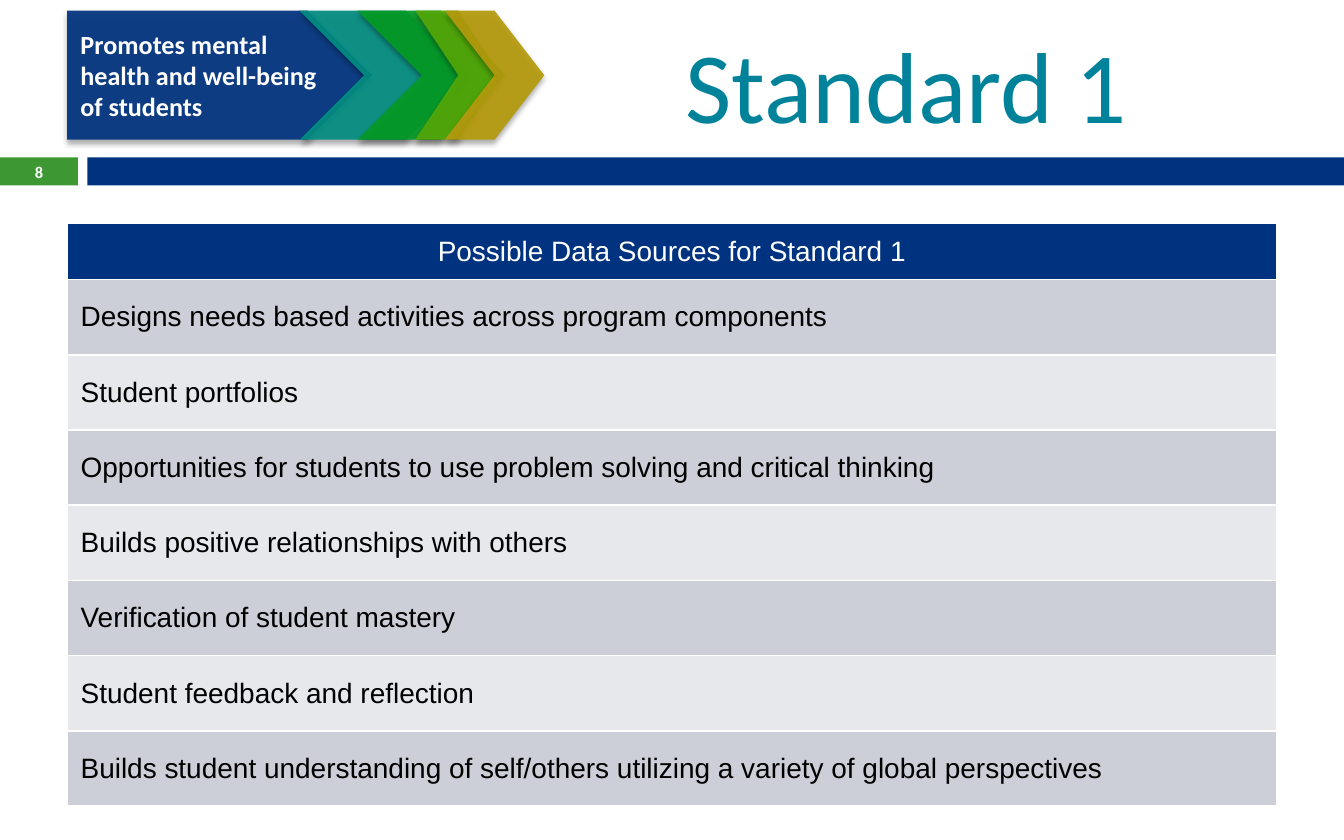
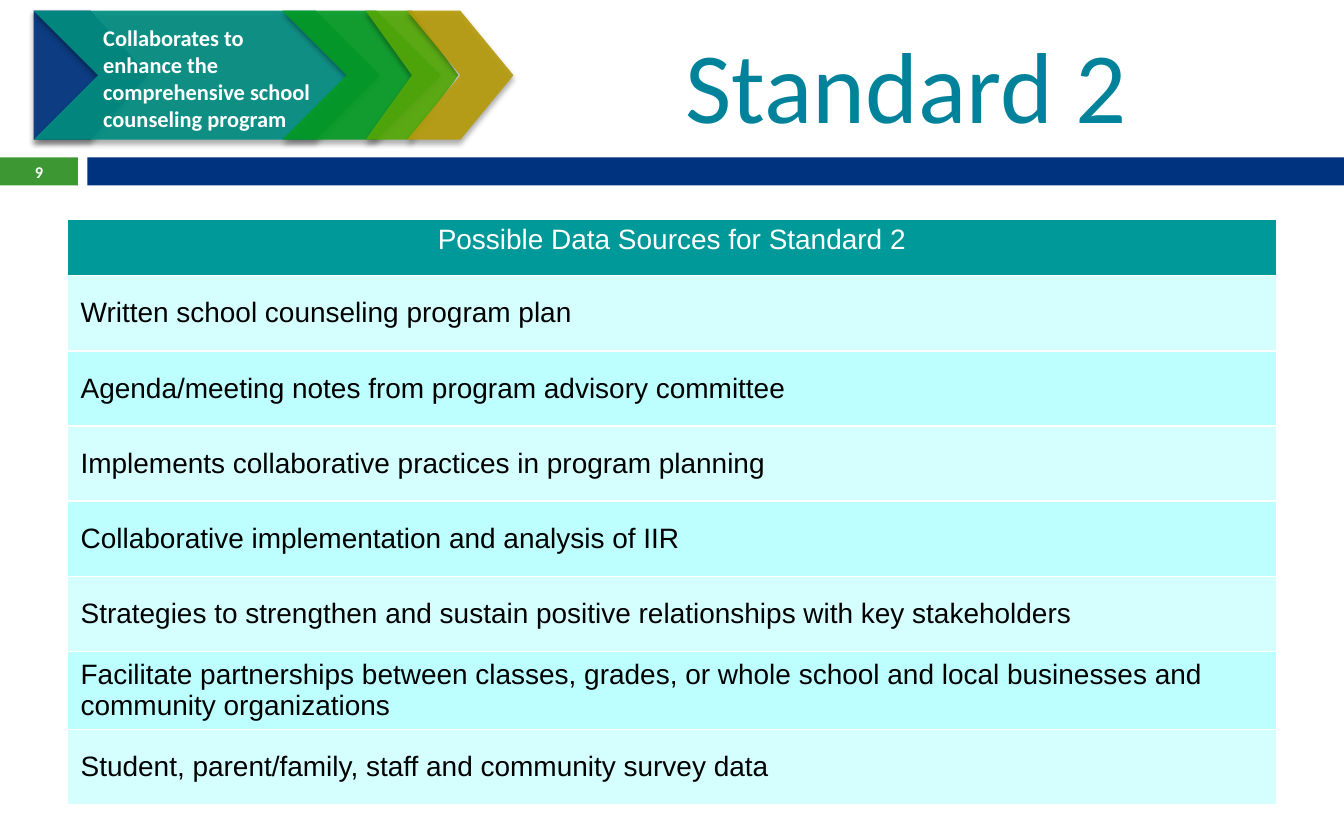
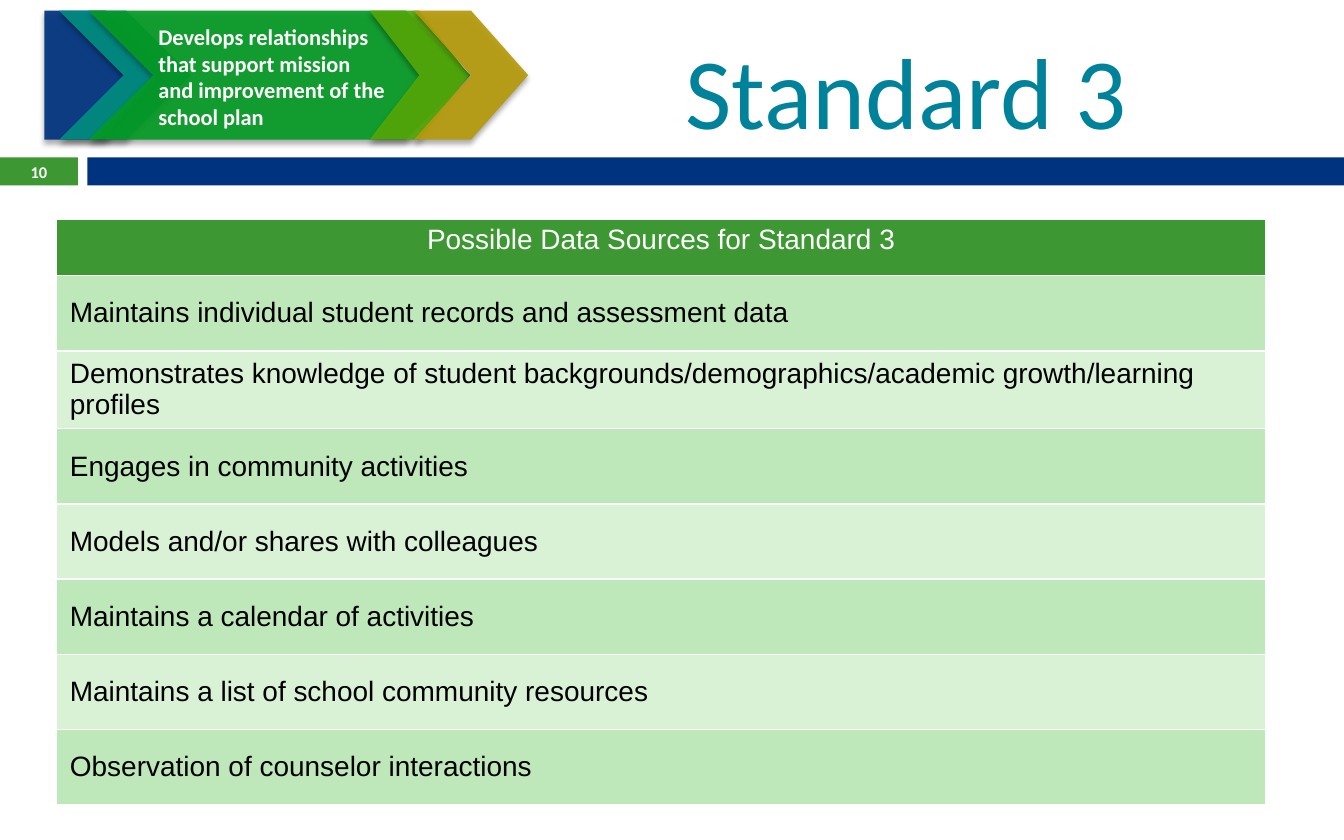
from lxml.etree import SubElement
from pptx import Presentation
from pptx.dml.color import RGBColor
from pptx.enum.shapes import MSO_SHAPE
from pptx.enum.text import MSO_ANCHOR, PP_ALIGN
from pptx.oxml import parse_xml
from pptx.oxml.ns import nsdecls, qn
from pptx.util import Inches, Pt

WHITE = RGBColor(0xFF, 0xFF, 0xFF)
BLACK = RGBColor(0x00, 0x00, 0x00)
NAVY = RGBColor(0x00, 0x33, 0x7F)
GREEN = RGBColor(0x3D, 0x98, 0x33)
TITLE_TEAL = RGBColor(0x00, 0x82, 0x9B)
TABLE_TEAL = RGBColor(0x00, 0x99, 0x99)
ARROW_COLORS = [
    NAVY,
    RGBColor(0x02, 0x8D, 0x81),
    RGBColor(0x05, 0x9B, 0x26),
    RGBColor(0x53, 0xA8, 0x08),
    RGBColor(0xB5, 0x9B, 0x0C),
]

TITLE_FONT = {"name": "Calibri", "size": Pt(54), "color": TITLE_TEAL}
NUMBER_FONT = {"name": "Calibri", "size": Pt(8.8), "bold": True, "color": WHITE}
HEADER_FONT = {"name": "Arial", "size": Pt(15), "bold": False, "color": WHITE}
ROW_FONT = {**HEADER_FONT, "color": BLACK}

ARROW_TOP, ARROW_HEIGHT = 0.08, 0.96
HEADER_HEIGHT, ROW_HEIGHT, TALL_ROW_HEIGHT = 0.42, 0.56, 0.58

STANDARDS = [
    {
        "page": 8,
        "title": "Standard 1",
        "title_top": 0.08,
        "arrows": [(0.5, 2.27), (2.23, 1.27), (2.66, 1.1), (3.09, 0.64), (3.31, 0.74)],
        "label": ["Promotes mental", "health and well-being", "of students"],
        "label_box": (0.5, 0.16, 2.17, 1.04),
        "label_size": 14,
        "table_at": (0.5, 1.66),
        "header_anchor": MSO_ANCHOR.MIDDLE,
        "header_fill": NAVY,
        "row_fills": [RGBColor(0xCC, 0xCE, 0xD8), RGBColor(0xE7, 0xE8, 0xEC)],
        "tall_row": None,
        "sources": [
            "Designs needs based activities across program components",
            "Student portfolios",
            "Opportunities for students to use problem solving and critical thinking",
            "Builds positive relationships with others",
            "Verification of student mastery",
            "Student feedback and reflection",
            "Builds student understanding of self/others utilizing a variety of global perspectives",
        ],
    },
    {
        "page": 9,
        "title": "Standard 2",
        "title_top": 0.08,
        "arrows": [(0.25, 0.85), (0.25, 2.58), (2.1, 1.18), (2.72, 0.69), (3.03, 0.79)],
        "label": ["Collaborates to enhance the comprehensive school counseling program"],
        "label_box": (0.67, 0.13, 1.83, 0.91),
        "label_size": 12,
        "table_at": (0.5, 1.63),
        "header_anchor": MSO_ANCHOR.TOP,
        "header_fill": TABLE_TEAL,
        "row_fills": [RGBColor(0xD5, 0xFF, 0xFF), RGBColor(0xBD, 0xFF, 0xFF)],
        "tall_row": 6,
        "sources": [
            "Written school counseling program plan",
            "Agenda/meeting notes from program advisory committee",
            "Implements collaborative practices in program planning",
            "Collaborative implementation and analysis of IIR",
            "Strategies to strengthen and sustain positive relationships with key stakeholders",
            "Facilitate partnerships between classes, grades, or whole school and local businesses "
            "and community organizations",
            "Student, parent/family, staff and community survey data",
        ],
    },
    {
        "page": 10,
        "title": "Standard 3",
        "title_top": 0.12,
        "arrows": [(0.33, 0.91), (0.44, 0.98), (0.66, 2.84), (2.75, 0.74), (3.08, 0.85)],
        "label": ["Develops relationships that support mission and improvement of the school plan"],
        "label_box": (1.08, 0.12, 1.92, 0.91),
        "label_size": 12,
        "table_at": (0.42, 1.63),
        "header_anchor": MSO_ANCHOR.TOP,
        "header_fill": GREEN,
        "row_fills": [RGBColor(0xBE, 0xE8, 0xBA), RGBColor(0xD9, 0xF2, 0xD6)],
        "tall_row": 2,
        "sources": [
            "Maintains individual student records and assessment data",
            "Demonstrates knowledge of student backgrounds/demographics/academic growth/learning "
            "profiles",
            "Engages in community activities",
            "Models and/or shares with colleagues",
            "Maintains a calendar of activities",
            "Maintains a list of school community resources",
            "Observation of counselor interactions",
        ],
    },
]


def write(frame, lines, font, align=PP_ALIGN.LEFT, anchor=MSO_ANCHOR.TOP):
    """Fill a text frame with one paragraph per line."""
    frame.word_wrap = True
    frame.vertical_anchor = anchor
    for index, line in enumerate(lines):
        paragraph = frame.add_paragraph() if index else frame.paragraphs[0]
        paragraph.alignment = align
        run = paragraph.add_run()
        run.text = line
        for attribute, value in font.items():
            if attribute == "color":
                run.font.color.rgb = value
            else:
                setattr(run.font, attribute, value)


def add_filled(shapes, preset, box, color):
    """Add a preset shape with a plain fill, no line and no shadow."""
    shape = shapes.add_shape(preset, *map(Inches, box))
    shape.fill.solid()
    shape.fill.fore_color.rgb = color
    shape.line.fill.background()
    shape.shadow.inherit = False
    return shape


prs = Presentation()
prs.slide_width, prs.slide_height = Inches(10), Inches(6.25)

for standard in STANDARDS:
    slide = prs.slides.add_slide(prs.slide_layouts[6])

    # Bands under the heading
    add_filled(slide.shapes, MSO_SHAPE.RECTANGLE, (0, 1.17, 0.58, 0.21), GREEN)
    add_filled(slide.shapes, MSO_SHAPE.RECTANGLE, (0.65, 1.17, 9.35, 0.21), NAVY)

    # Title
    title_box = map(Inches, (5, standard["title_top"], 4.5, 1.04))
    title = slide.shapes.add_textbox(*title_box)
    write(title.text_frame, [standard["title"]], TITLE_FONT, anchor=MSO_ANCHOR.BOTTOM)

    # Table of data sources
    heights = [HEADER_HEIGHT] + [ROW_HEIGHT] * len(standard["sources"])
    if standard["tall_row"]:
        heights[standard["tall_row"]] = TALL_ROW_HEIGHT
    table_box = map(Inches, (*standard["table_at"], 9, sum(heights)))
    sources = slide.shapes.add_table(len(heights), 1, *table_box).table
    header = f"Possible Data Sources for {standard['title']}"
    for index, text in enumerate([header, *standard["sources"]]):
        sources.rows[index].height = Inches(heights[index])
        cell = sources.cell(index, 0)
        cell.margin_top = cell.margin_bottom = Inches(0.04)
        for side in "LRTB":
            under_header = (index, side) in ((0, "B"), (1, "T"))
            border = SubElement(cell._tc.get_or_add_tcPr(), qn(f"a:ln{side}"),
                                w=str(Pt(3 if under_header and False else 1)))
            border.append(parse_xml(
                f'<a:solidFill {nsdecls("a")}><a:srgbClr val="{WHITE}"/></a:solidFill>'))
        cell.fill.solid()
        if index == 0:
            cell.fill.fore_color.rgb = standard["header_fill"]
            write(cell.text_frame, [text], HEADER_FONT, PP_ALIGN.CENTER)
            cell.vertical_anchor = standard["header_anchor"]
        else:
            cell.fill.fore_color.rgb = standard["row_fills"][(index - 1) % 2]
            write(cell.text_frame, [text], ROW_FONT)
            cell.vertical_anchor = MSO_ANCHOR.MIDDLE

    # Row of arrows, slightly transparent, with a soft shadow below
    arrows = slide.shapes.add_group_shape()
    for index, (left, width) in enumerate(standard["arrows"]):
        preset = MSO_SHAPE.CHEVRON if index else MSO_SHAPE.PENTAGON
        arrow = add_filled(arrows.shapes, preset, (left, ARROW_TOP, width, ARROW_HEIGHT),
                           ARROW_COLORS[index])
        properties = arrow._element.spPr
        fill_color = properties.find(f"{qn('a:solidFill')}/{qn('a:srgbClr')}")
        SubElement(fill_color, qn("a:alpha"), val="92000")
        properties.find(qn("a:effectLst")).append(parse_xml(
            f'<a:outerShdw {nsdecls("a")} blurRad="{Pt(3)}" dist="{Pt(2)}" dir="5400000" '
            f'rotWithShape="0"><a:srgbClr val="{BLACK}"><a:alpha val="35000"/></a:srgbClr>'
            '</a:outerShdw>'))

    # Page number
    number = slide.shapes.add_textbox(*map(Inches, (0, 1.17, 0.58, 0.22)))
    write(number.text_frame, [str(standard["page"])], NUMBER_FONT, PP_ALIGN.CENTER,
          MSO_ANCHOR.MIDDLE)

    # Label on the arrows
    label = slide.shapes.add_textbox(*map(Inches, standard["label_box"]))
    label_font = {**NUMBER_FONT, "size": Pt(standard["label_size"])}
    write(label.text_frame, standard["label"], label_font)

prs.save("out.pptx")
